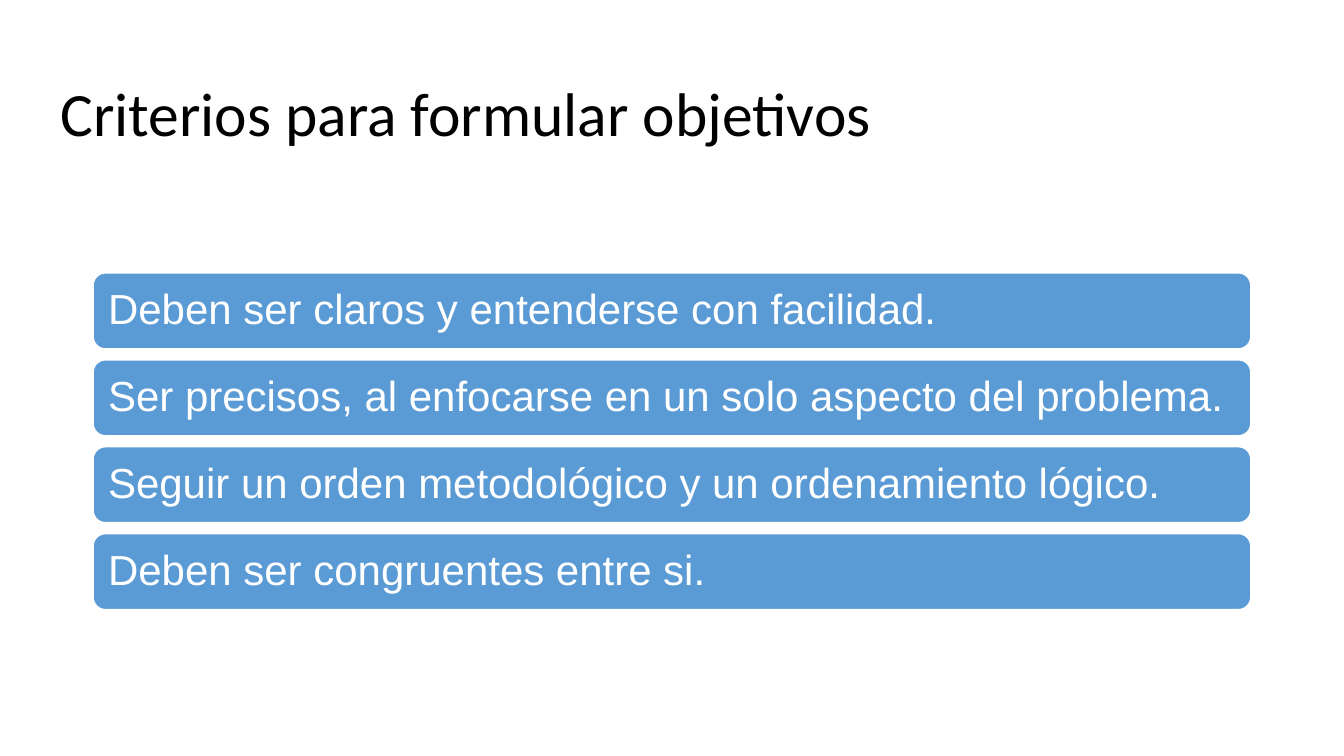
from dataclasses import dataclass

from pptx import Presentation
from pptx.dml.color import RGBColor
from pptx.enum.shapes import MSO_SHAPE
from pptx.enum.text import MSO_ANCHOR, MSO_AUTO_SIZE, PP_ALIGN
from pptx.util import Cm, Pt

# Content
TITLE = "Criterios para formular objetivos"
CRITERIA = [
    "Deben ser claros y entenderse con facilidad.",
    "Ser precisos, al enfocarse en un solo aspecto del problema.",
    "Seguir un orden metodológico y un ordenamiento lógico.",
    "Deben ser congruentes entre si.",
]


@dataclass(frozen=True)
class Theme:
    black: RGBColor = RGBColor(0x00, 0x00, 0x00)
    white: RGBColor = RGBColor(0xFF, 0xFF, 0xFF)
    blue: RGBColor = RGBColor(0x5B, 0x9B, 0xD5)
    title_font: str = "Calibri"
    bar_font: str = "Arial"
    title_size: Pt = Pt(44)
    bar_size: Pt = Pt(30)
    outline: Pt = Pt(2)


THEME = Theme()

# Layout of the bars, in centimetres
BAR_LEFT, BAR_TOP = 2.33, 6.86
BAR_WIDTH, BAR_HEIGHT, BAR_GAP = 29.21, 1.95, 0.24
BAR_INSET = 0.3


def write(shape, text, font, size, color):
    """Fill a shape with one left-aligned, vertically centred paragraph."""
    frame = shape.text_frame
    frame.text = text
    frame.word_wrap = True
    frame.auto_size = MSO_AUTO_SIZE.NONE
    frame.vertical_anchor = MSO_ANCHOR.MIDDLE
    para = frame.paragraphs[0]
    para.alignment = PP_ALIGN.LEFT
    para.line_spacing = 0.9
    span = para.runs[0]
    span.font.name = font
    span.font.size = size
    span.font.color.rgb = color
    return frame


def add_bar(page, index, text):
    top = BAR_TOP + index * (BAR_HEIGHT + BAR_GAP)
    bar = page.shapes.add_shape(
        MSO_SHAPE.ROUNDED_RECTANGLE,
        Cm(BAR_LEFT), Cm(top), Cm(BAR_WIDTH), Cm(BAR_HEIGHT),
    )
    bar.shadow.inherit = False
    bar.fill.solid()
    bar.fill.fore_color.rgb = THEME.blue
    bar.line.color.rgb = THEME.white
    bar.line.width = THEME.outline
    frame = write(bar, text, THEME.bar_font, THEME.bar_size, THEME.white)
    frame.margin_left = frame.margin_right = Cm(BAR_INSET)
    frame.margin_top = frame.margin_bottom = Cm(BAR_INSET)


def main():
    deck = Presentation()
    deck.slide_width, deck.slide_height = Cm(33.87), Cm(19.05)
    page = deck.slides.add_slide(deck.slide_layouts[5])

    # Title
    title = page.shapes.title
    title.left, title.top = Cm(1.27), Cm(1.73)
    title.width, title.height = Cm(27.13), Cm(2.41)
    write(title, TITLE, THEME.title_font, THEME.title_size, THEME.black)

    # Stack of criteria
    for index, text in enumerate(CRITERIA):
        add_bar(page, index, text)

    deck.save("out.pptx")


if __name__ == "__main__":
    main()
